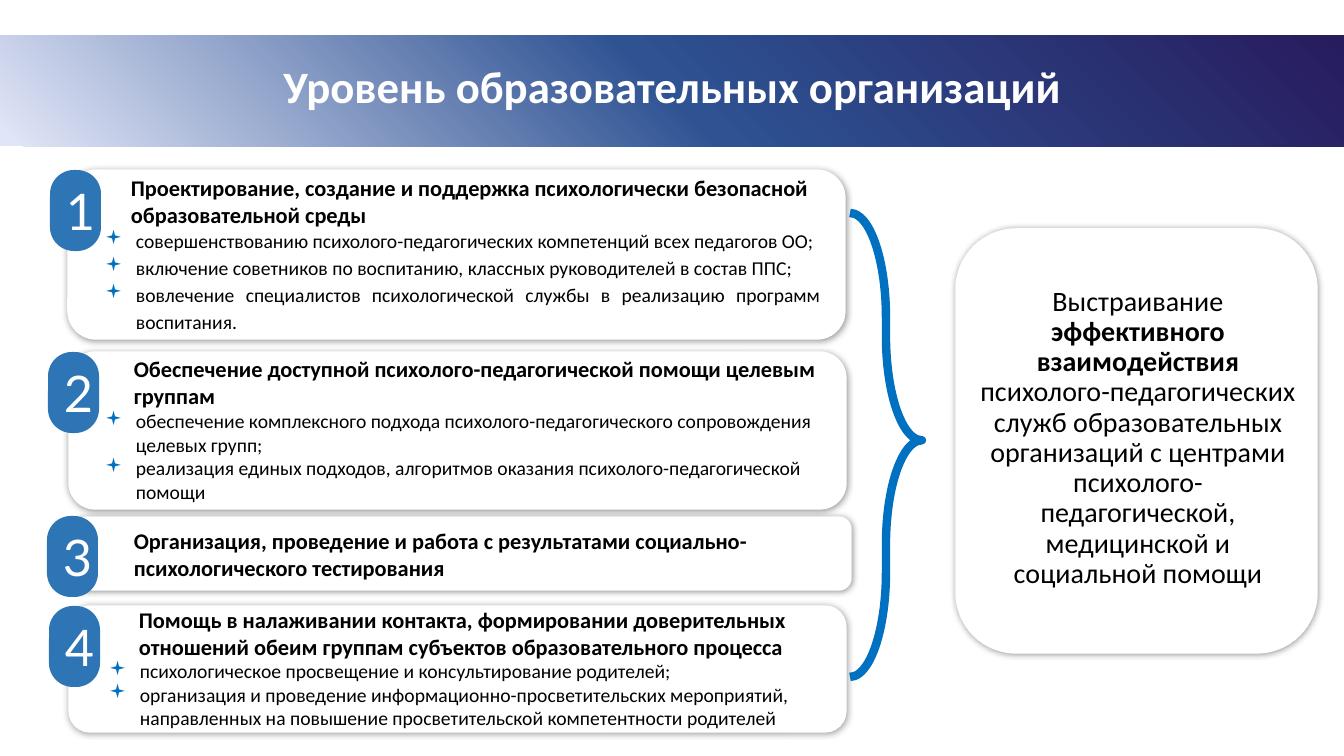
from dataclasses import dataclass

from lxml import etree
from pptx import Presentation
from pptx.dml.color import RGBColor
from pptx.enum.shapes import MSO_SHAPE
from pptx.enum.text import MSO_ANCHOR, MSO_AUTO_SIZE, PP_ALIGN
from pptx.oxml.ns import qn
from pptx.util import Pt

TITLE = "Уровень образовательных организаций"

GOAL = [
    ("Выстраивание ", False),
    ("эффективного взаимодействия ", True),
    ("психолого-педагогических служб образовательных организаций с центрами "
     "психолого-педагогической, медицинской и социальной помощи", False),
]

# Boxes are (left, top, width, height) in px
DIRECTIONS = [
    {
        "heading": "Проектирование, создание и поддержка психологически безопасной "
                   "образовательной среды",
        "items": [
            "совершенствованию психолого-педагогических компетенций всех педагогов ОО;",
            "включение советников по воспитанию, классных руководителей в состав ППС;",
            "вовлечение специалистов психологической службы в реализацию программ воспитания.",
        ],
        "justified": True,
        "card": (68, 170, 777, 169), "badge": (50, 170),
        "heading_at": (121, 169), "list_box": (95, 220, 736, 119),
    },
    {
        "heading": "Обеспечение доступной психолого-педагогической помощи целевым группам",
        "items": [
            "обеспечение комплексного подхода психолого-педагогического сопровождения "
            "целевых групп;",
            "реализация единых подходов, алгоритмов оказания психолого-педагогической помощи",
        ],
        "card": (69, 352, 777, 157), "badge": (48, 352),
        "heading_at": (124, 350), "list_box": (95, 404, 736, 105),
    },
    {
        "heading": "Организация, проведение и работа с результатами "
                   "социально-психологического тестирования",
        "items": [],
        "card": (74, 517, 777, 73), "badge": (47, 516),
        "heading_at": (124, 522),
    },
    {
        "heading": "Помощь в налаживании контакта, формировании доверительных отношений "
                   "обеим группам субъектов образовательного процесса",
        "items": [
            "психологическое просвещение и консультирование родителей;",
            "организация и проведение информационно-просветительских мероприятий, "
            "направленных на повышение просветительской компетентности родителей",
        ],
        "card": (69, 606, 777, 126), "badge": (49, 606),
        "heading_at": (129, 601), "list_box": (99, 654, 736, 82),
    },
]

SLIDE_SIZE = (1344, 756)
BAND_BOX = (0, 35, 1344, 111)
TITLE_BOX = (93, 27, 1159, 124)
GOAL_CARD = (956, 229, 361, 424)
GOAL_BOX = (970, 282, 336, 310)
BRACE_BOX = (850, 213, 72, 464)
BADGE_SIZE = (51, 81)
HEADING_SIZE = (702, 65)
LIST_INDENT = 31


@dataclass(frozen=True)
class Theme:
    font: str = "Calibri"
    digit_font: str = "Lato"
    white: str = "FFFFFF"
    black: str = "000000"
    badge: str = "2E75B6"
    accent: str = "0070C0"
    band: tuple = ((0, "271C5E"), (50, "2E5292"), (99, "E0E5F7"))
    title_size: int = 32
    digit_size: int = 36
    goal_size: int = 20
    heading_size: int = 16
    list_size: int = 14


THEME = Theme()
ROUNDED = MSO_SHAPE.ROUNDED_RECTANGLE
RECTANGLE = MSO_SHAPE.RECTANGLE
BRACE = MSO_SHAPE.RIGHT_BRACE
MIDDLE = MSO_ANCHOR.MIDDLE
CENTER, JUSTIFY, LEFT = PP_ALIGN.CENTER, PP_ALIGN.JUSTIFY, PP_ALIGN.LEFT


def px(length):
    return round(length * 914400 / 100.8)


def place(shape, box):
    shape.left, shape.top, shape.width, shape.height = map(px, box)


def add_xml(parent, tag, **attributes):
    return etree.SubElement(parent, qn(tag), attributes)


def style_font(font, size, color=THEME.black, bold=False, name=THEME.font):
    font.name, font.size, font.bold = name, Pt(size), bold
    font.color.rgb = RGBColor.from_string(color)


def add_plain_shape(slide, kind, box, fill=None):
    shape = slide.shapes.add_shape(kind, *map(px, box))
    shape.shadow.inherit = False
    shape.line.fill.background()
    if fill:
        shape.fill.solid()
        shape.fill.fore_color.rgb = RGBColor.from_string(fill)
    else:
        shape.fill.background()
    return shape


def set_line(shape, color, width):
    shape.line.color.rgb = RGBColor.from_string(color)
    shape.line.width = Pt(width)


def add_card(slide, box):
    """White rounded card with a soft dark glow around its edge."""
    card = add_plain_shape(slide, ROUNDED, box, THEME.white)
    set_line(card, THEME.white, 1)
    effects = card.element.spPr.find(qn("a:effectLst"))
    shadow = add_xml(effects, "a:outerShdw", blurRad=str(Pt(5)), dist="0", dir="0",
                     algn="ctr", rotWithShape="0")
    color = add_xml(shadow, "a:srgbClr", val=THEME.black)
    add_xml(color, "a:alpha", val="40000")


def add_band(slide):
    """Title band with a gradient that spreads from one corner."""
    band = add_plain_shape(slide, RECTANGLE, BAND_BOX)
    band.rotation = 180
    properties = band.element.spPr
    gradient = etree.Element(qn("a:gradFill"), rotWithShape="1")
    stops = add_xml(gradient, "a:gsLst")
    for position, color in THEME.band:
        stop = add_xml(stops, "a:gs", pos=str(position * 1000))
        add_xml(stop, "a:srgbClr", val=color)
    path = add_xml(gradient, "a:path", path="circle")
    add_xml(path, "a:fillToRect", l="100000", b="100000")
    properties.replace(properties.find(qn("a:noFill")), gradient)


def fill_title(slide):
    title = slide.shapes.title
    place(title, TITLE_BOX)
    slide.shapes.element.append(title.element)  # bring in front of the band
    frame = title.text_frame
    frame.text = TITLE
    frame.vertical_anchor = MIDDLE
    paragraph = frame.paragraphs[0]
    paragraph.alignment, paragraph.line_spacing = CENTER, 0.9
    style_font(paragraph.runs[0].font, THEME.title_size, THEME.white, bold=True)


def fill_goal(slide):
    body = slide.placeholders[1]
    place(body, GOAL_BOX)
    slide.shapes.element.append(body.element)
    body.text_frame.auto_size = MSO_AUTO_SIZE.NONE
    paragraph = body.text_frame.paragraphs[0]
    paragraph.alignment, paragraph.line_spacing = CENTER, 0.9
    paragraph.space_before = Pt(0)
    properties = paragraph._p.get_or_add_pPr()
    properties.set("marL", "0")
    properties.set("indent", "0")
    add_xml(properties, "a:buNone")
    for text, bold in GOAL:
        run = paragraph.add_run()
        run.text = text
        style_font(run.font, THEME.goal_size, bold=bold)


def add_badge(slide, number, corner):
    badge = add_plain_shape(slide, ROUNDED, corner + BADGE_SIZE, THEME.badge)
    badge.adjustments[0] = 0.47
    frame = badge.text_frame
    frame.text = str(number)
    frame.word_wrap, frame.vertical_anchor = False, MIDDLE
    frame.margin_left, frame.margin_right = px(10), 0
    paragraph = frame.paragraphs[0]
    paragraph.alignment = CENTER
    style_font(paragraph.runs[0].font, THEME.digit_size, THEME.white, name=THEME.digit_font)


def add_text(slide, box, lines, size, bold=False):
    frame = slide.shapes.add_textbox(*map(px, box)).text_frame
    frame.word_wrap = True
    frame.text = "\n".join(lines)
    for paragraph in frame.paragraphs:
        style_font(paragraph.runs[0].font, size, bold=bold)
    return frame.paragraphs


def add_list(slide, box, items, justified):
    for paragraph in add_text(slide, box, items, THEME.list_size):
        paragraph.alignment = JUSTIFY if justified else LEFT
        paragraph.line_spacing = 1.15 if justified else 1.0
        properties = paragraph._p.get_or_add_pPr()
        properties.set("marL", str(px(LIST_INDENT)))
        properties.set("indent", str(-px(LIST_INDENT)))
        add_xml(add_xml(properties, "a:buClr"), "a:srgbClr", val=THEME.accent)
        add_xml(properties, "a:buFont", typeface="Wingdings")
        add_xml(properties, "a:buChar", char="▪")


def main():
    presentation = Presentation()
    presentation.slide_width, presentation.slide_height = map(px, SLIDE_SIZE)
    slide = presentation.slides.add_slide(presentation.slide_layouts[1])
    for box in [GOAL_CARD] + [direction["card"] for direction in reversed(DIRECTIONS)]:
        add_card(slide, box)
    fill_goal(slide)
    add_band(slide)
    fill_title(slide)
    for number, direction in enumerate(DIRECTIONS, start=1):
        add_badge(slide, number, direction["badge"])
        add_text(slide, direction["heading_at"] + HEADING_SIZE, [direction["heading"]],
                 THEME.heading_size, bold=True)
        if direction["items"]:
            add_list(slide, direction["list_box"], direction["items"],
                     direction.get("justified", False))
    brace = add_plain_shape(slide, BRACE, BRACE_BOX)
    set_line(brace, THEME.accent, 6)
    brace.adjustments[0], brace.adjustments[1] = 1.45, 0.49
    presentation.save("out.pptx")


if __name__ == "__main__":
    main()
